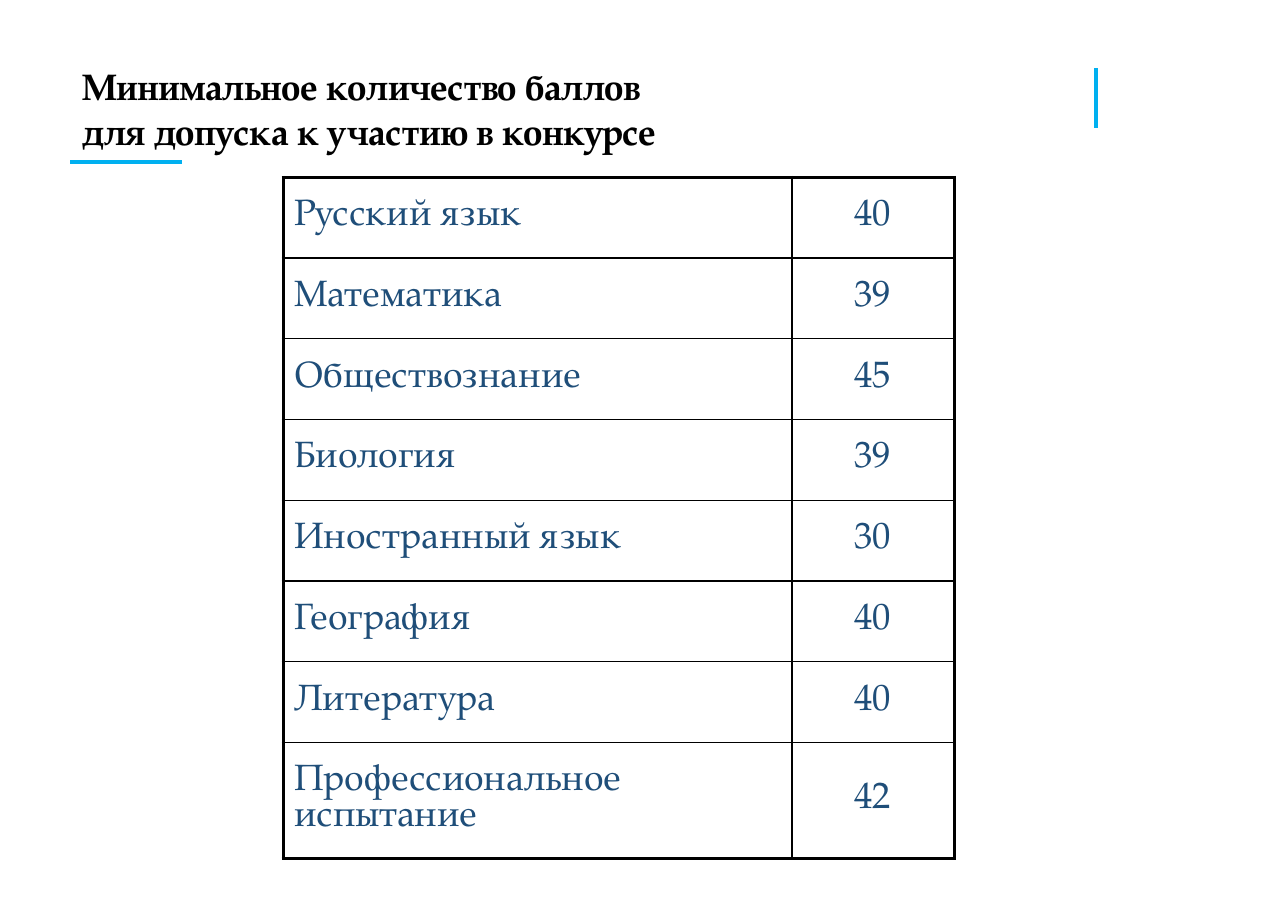
from lxml.etree import SubElement
from pptx import Presentation
from pptx.dml.color import RGBColor
from pptx.enum.shapes import MSO_CONNECTOR
from pptx.enum.text import MSO_ANCHOR, MSO_AUTO_SIZE, PP_ALIGN
from pptx.oxml import parse_xml
from pptx.oxml.ns import nsdecls, qn
from pptx.util import Cm, Pt

COLORS = {"title": "000000", "accent": "00B0F0", "score": "1F4E79", "border": "000000"}
FONT = "TeX Gyre Pagella"
TITLE_LINES = ["Минимальное количество баллов", "для допуска к участию в конкурсе"]
SCORES = [
    ("Русский язык", 40),
    ("Математика", 39),
    ("Обществознание", 45),
    ("Биология", 39),
    ("Иностранный язык", 30),
    ("География", 40),
    ("Литература", 40),
    ("Профессиональное испытание", 42),
]
THICK, THIN = 2.25, 1


def write(para, text, color, line_height, align=PP_ALIGN.LEFT, bold=False):
    para.alignment = align
    para.line_spacing = Pt(line_height)
    para.space_before = para.space_after = Pt(0)
    span = para.add_run()
    span.text = text
    span.font.name, span.font.size, span.font.bold = FONT, Pt(24), bold
    span.font.color.rgb = RGBColor.from_string(COLORS[color])


def add_title(page, left, top, width, height):
    box = page.shapes.title
    box.left, box.top, box.width, box.height = Cm(left), Cm(top), Cm(width), Cm(height)
    frame = box.text_frame
    frame.word_wrap = True
    frame.auto_size = MSO_AUTO_SIZE.NONE
    frame.vertical_anchor = MSO_ANCHOR.MIDDLE
    for index, line in enumerate(TITLE_LINES):
        para = frame.add_paragraph() if index else frame.paragraphs[0]
        write(para, line, "title", 29, bold=True)


def add_accent(page, left, top, width, height, weight):
    line = page.shapes.add_connector(
        MSO_CONNECTOR.STRAIGHT, Cm(left), Cm(top), Cm(left + width), Cm(top + height))
    line.line.color.rgb = RGBColor.from_string(COLORS["accent"])
    line.line.width = Pt(weight)
    SubElement(line._element.spPr, qn("a:effectLst"))


def set_borders(cell, weights):
    properties = cell._tc.get_or_add_tcPr()
    for index, (side, weight) in enumerate(weights.items()):
        properties.insert(index, parse_xml(
            f'<a:ln{side} {nsdecls("a")} w="{Pt(weight)}"><a:solidFill>'
            f'<a:srgbClr val="{COLORS["border"]}"/></a:solidFill></a:ln{side}>'))


def add_scores(page, left, top, width, height):
    last_row, last_column = len(SCORES) - 1, 1
    table = page.shapes.add_table(
        len(SCORES), 2, Cm(left), Cm(top), Cm(width), Cm(height)).table
    table.first_row = table.horz_banding = False

    # The last row is taller, because its subject takes two lines
    row_height = 1.86
    for row in table.rows:
        row.height = Cm(row_height)
    table.rows[last_row].height = Cm(height - last_row * row_height)
    score_width = 3.74
    table.columns[0].width = Cm(width - score_width)
    table.columns[1].width = Cm(score_width)

    for row, values in enumerate(SCORES):
        for column, value in enumerate(values):
            cell = table.cell(row, column)
            cell.fill.background()
            cell.vertical_anchor = MSO_ANCHOR.MIDDLE
            write(cell.text_frame.paragraphs[0], str(value), "score", 24,
                  PP_ALIGN.CENTER if column else PP_ALIGN.LEFT)
            # Thick outer frame, thin inner grid
            set_borders(cell, {
                "L": THICK if column == 0 else THIN,
                "R": THICK if column == last_column else THIN,
                "T": THICK if row == 0 else THIN,
                "B": THICK if row == last_row else THIN,
            })


def main():
    deck = Presentation()
    deck.slide_width, deck.slide_height = Cm(29.7), Cm(21)
    page = deck.slides.add_slide(deck.slide_layouts.get_by_name("Title Only"))

    # Accent lines
    add_accent(page, 1.62, 3.73, 2.57, 0, 3)
    add_accent(page, 25.27, 1.57, 0, 1.38, THICK)

    # Heading and score table
    add_title(page, 1.65, 1.24, 23.24, 2.5)
    add_scores(page, 6.53, 4.09, 15.47, 15.7)
    deck.save("out.pptx")


if __name__ == "__main__":
    main()
